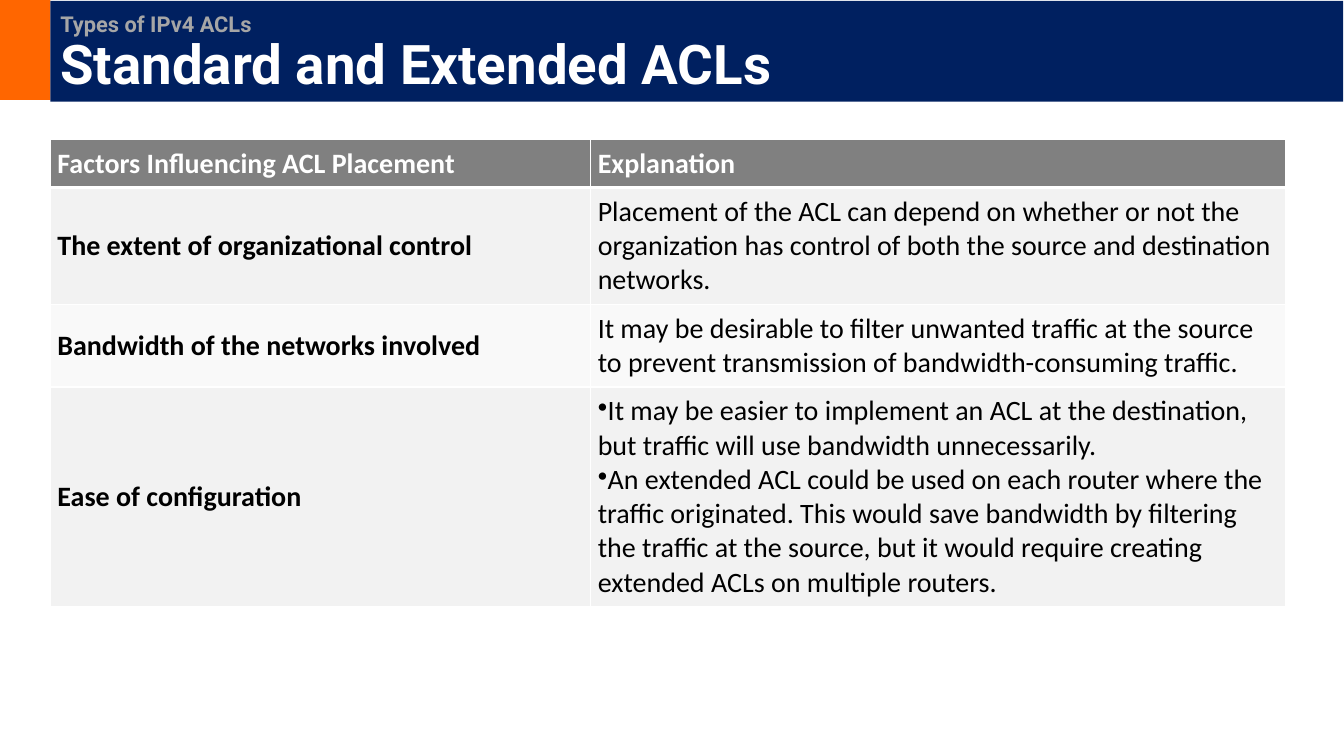
from dataclasses import dataclass

from lxml import etree
from pptx import Presentation
from pptx import util as u
from pptx.dml.color import RGBColor
from pptx.enum import shapes, text
from pptx.oxml.ns import qn

COLORS = {
    "accent": "FF6600",
    "band": "002060",
    "subtitle": "A6A6A6",
    "white": "FFFFFF",
    "black": "000000",
    "header": "808080",
    "odd_row": "F2F2F2",
    "even_row": "F9F9F9",
}
COLUMN_WIDTHS = (386, 496)
CELL_MARGIN = 5


@dataclass
class Bar:
    left: float
    top: float
    width: float
    height: float
    color: str


@dataclass
class Row:
    factor: str
    explanation: list[str]
    height: float


ACCENT_BAR = Bar(0, 0, 36, 71.3, "accent")
TITLE_BAR = Bar(36, 0.6, 923.5, 72, "band")
ROWS = [
    Row("Factors Influencing ACL Placement", ["Explanation"], 34),
    Row("The extent of organizational control",
        ["Placement of the ACL can depend on whether or not the organization has "
         "control of both the source and destination networks."], 83.5),
    Row("Bandwidth of the networks involved",
        ["It may be desirable to filter unwanted traffic at the source to prevent "
         "transmission of bandwidth-consuming traffic."], 59),
    Row("Ease of configuration",
        ["It may be easier to implement an ACL at the destination, but traffic will "
         "use bandwidth unnecessarily.",
         "An extended ACL could be used on each router where the traffic originated. "
         "This would save bandwidth by filtering the traffic at the source, but it "
         "would require creating extended ACLs on multiple routers."], 156),
]


def rgb(name: str) -> RGBColor:
    return RGBColor.from_string(COLORS[name])


def add_run(paragraph, words: str, font: str, size: float, color: str, bold: bool = True) -> None:
    run = paragraph.add_run()
    run.text = words
    run.font.name = font
    run.font.size = u.Pt(size)
    run.font.bold = bold
    run.font.color.rgb = rgb(color)


def add_bar(slide, bar: Bar):
    shape = slide.shapes.add_shape(
        shapes.MSO_SHAPE.RECTANGLE,
        u.Pt(bar.left), u.Pt(bar.top), u.Pt(bar.width), u.Pt(bar.height))
    shape.shadow.inherit = False
    shape.fill.solid()
    shape.fill.fore_color.rgb = rgb(bar.color)
    shape.line.fill.background()
    return shape


def add_title(slide) -> None:
    frame = add_bar(slide, TITLE_BAR).text_frame
    frame.word_wrap = True
    frame.vertical_anchor = text.MSO_ANCHOR.BOTTOM
    paragraph = frame.paragraphs[0]
    paragraph.alignment = text.PP_ALIGN.LEFT
    paragraph.line_spacing = 0.9
    add_run(paragraph, "Types of IPv4 ACLs", "Roboto", 15.6, "subtitle")
    paragraph.add_line_break()
    add_run(paragraph, "Standard and Extended ACLs", "Roboto", 39, "white")


def add_borders(cell, bottom_width: float) -> None:
    properties = cell._tc.get_or_add_tcPr()
    for side in "LRTB":
        width = bottom_width if side == "B" else 1
        line = etree.SubElement(properties, qn(f"a:ln{side}"), w=str(u.Pt(width)))
        fill = etree.SubElement(line, qn("a:solidFill"))
        etree.SubElement(fill, qn("a:srgbClr"), val=COLORS["white"])


def add_bullet(paragraph) -> None:
    properties = paragraph._p.get_or_add_pPr()
    properties.set("marL", "0")
    properties.set("indent", "0")
    etree.SubElement(properties, qn("a:buChar"), char="•")


def fill_cell(cell, lines: list[str], fill: str, color: str, bold: bool, bottom_width: float) -> None:
    add_borders(cell, bottom_width)
    cell.fill.solid()
    cell.fill.fore_color.rgb = rgb(fill)
    cell.vertical_anchor = text.MSO_ANCHOR.MIDDLE
    cell.margin_left = cell.margin_right = u.Pt(CELL_MARGIN)
    cell.margin_top = cell.margin_bottom = u.Pt(CELL_MARGIN)
    frame = cell.text_frame
    for index, line in enumerate(lines):
        paragraph = frame.add_paragraph() if index else frame.paragraphs[0]
        if len(lines) > 1:
            add_bullet(paragraph)
        add_run(paragraph, line, "Calibri", 20, color, bold)


def add_factor_table(slide) -> None:
    table = slide.shapes.add_table(
        len(ROWS), len(COLUMN_WIDTHS), u.Pt(36), u.Pt(99.5),
        u.Pt(sum(COLUMN_WIDTHS)), u.Pt(sum(row.height for row in ROWS))).table
    for column, width in zip(table.columns, COLUMN_WIDTHS):
        column.width = u.Pt(width)
    for index, row in enumerate(ROWS):
        table.rows[index].height = u.Pt(row.height)
        is_header = index == 0
        fill = "header" if is_header else "odd_row" if index % 2 else "even_row"
        color = "white" if is_header else "black"
        bottom_width = 3 if is_header else 1
        fill_cell(table.cell(index, 0), [row.factor], fill, color, True, bottom_width)
        fill_cell(table.cell(index, 1), row.explanation, fill, color, is_header, bottom_width)


def main() -> None:
    presentation = Presentation()
    presentation.slide_width = u.Pt(960)
    presentation.slide_height = u.Pt(540)
    slide = presentation.slides.add_slide(presentation.slide_layouts[6])
    add_bar(slide, ACCENT_BAR)
    add_factor_table(slide)
    add_title(slide)
    presentation.save("out.pptx")


if __name__ == "__main__":
    main()
